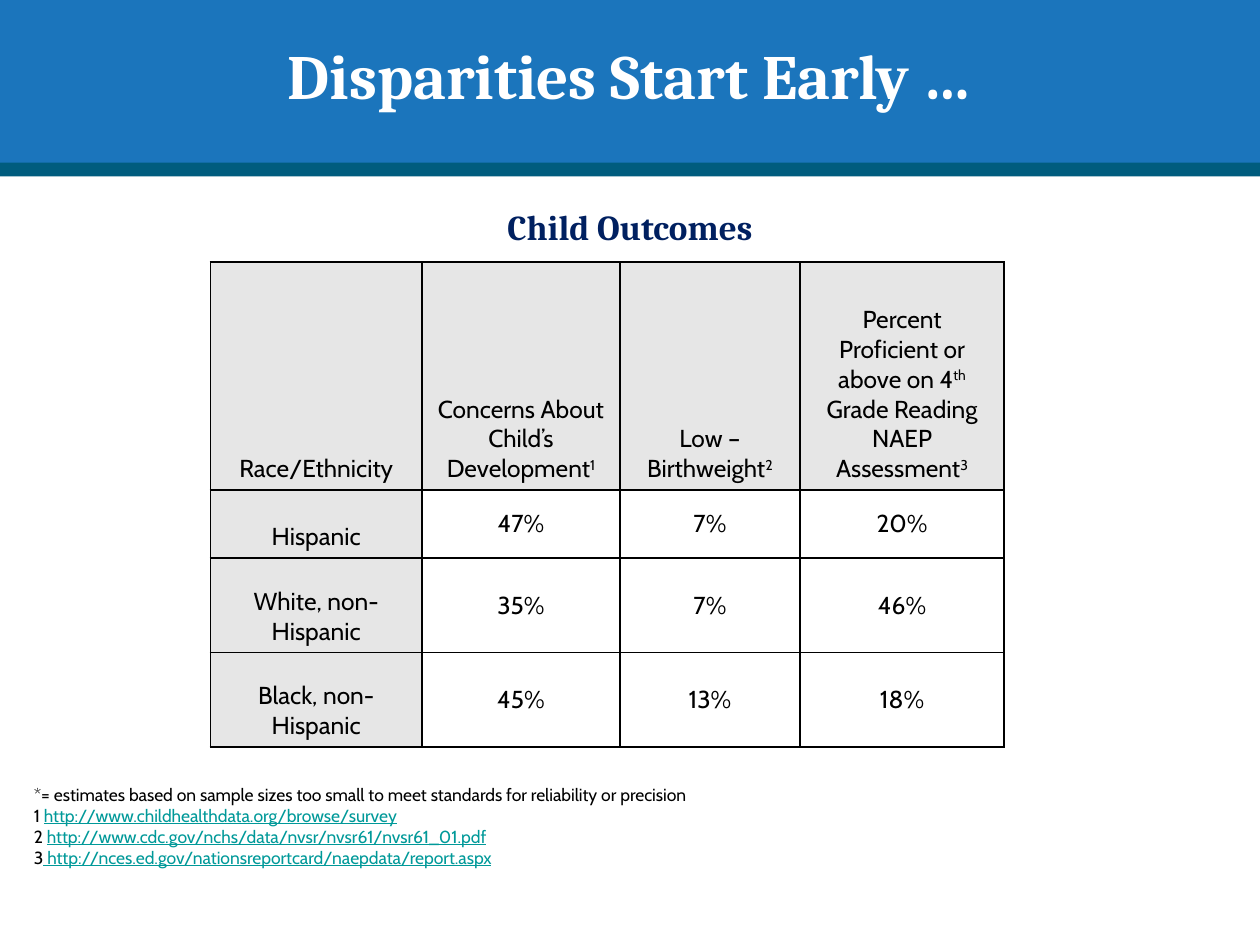
from dataclasses import dataclass

from lxml.etree import SubElement
from pptx import Presentation
from pptx.dml.color import RGBColor
from pptx.enum.shapes import MSO_SHAPE
from pptx.enum.text import MSO_ANCHOR, PP_ALIGN
from pptx.oxml.ns import qn
from pptx.util import Inches, Pt


@dataclass(frozen=True)
class Theme:
    """Colours, fonts and type sizes of the slide."""
    blue: str = "1B75BC"
    teal: str = "005C7E"
    navy: str = "002060"
    link: str = "009999"
    grey: str = "E6E6E6"
    white: str = "FFFFFF"
    black: str = "000000"
    serif: str = "Cambria"
    sans: str = "Cabin"
    title: int = 36
    head: int = 20
    cell: int = 14
    note: int = 10


THEME = Theme()
HEADS = [
    [("Race/Ethnicity", False)],
    [("Concerns About Child’s Development", False), ("1", True)],
    [("Low –Birthweight", False), ("2", True)],
    [("Percent Proficient or above on 4", False), ("th", True),
     (" Grade Reading NAEP Assessment", False), ("3", True)],
]
ROWS = [
    ("Hispanic", "47%", "7%", "20%"),
    ("White, non-Hispanic", "35%", "7%", "46%"),
    ("Black, non-Hispanic", "45%", "13%", "18%"),
]
WIDTHS = (1.68, 1.57, 1.43, 1.62)
HEIGHTS = (1.81, 0.54, 0.75, 0.75)
NOTES = [
    ("*= estimates based on sample sizes too small to meet standards "
     "for reliability or precision", ""),
    ("1 ", "http://www.childhealthdata.org/browse/survey"),
    ("2 ", "http://www.cdc.gov/nchs/data/nvsr/nvsr61/nvsr61_01.pdf"),
    ("3", " http://nces.ed.gov/nationsreportcard/naepdata/report.aspx"),
]


def style(para, face, size, color, bold=False, align=PP_ALIGN.CENTER):
    """Set the font and alignment of a paragraph."""
    font = para.font
    font.name, font.size, font.bold = face, Pt(size), bold
    font.color.rgb = RGBColor.from_string(color)
    para.alignment = align


def add_box(slide, box, inset=None):
    """Add a wrapping text box and return its frame."""
    frame = slide.shapes.add_textbox(*map(Inches, box)).text_frame
    frame.word_wrap = True
    if inset is not None:
        frame.margin_left = frame.margin_right = Inches(inset)
        frame.margin_top = frame.margin_bottom = Inches(inset)
    return frame


def add_band(slide, box, color):
    """Add a plain filled rectangle."""
    band = slide.shapes.add_shape(MSO_SHAPE.RECTANGLE, *map(Inches, box))
    band.shadow.inherit = False
    band.fill.solid()
    band.fill.fore_color.rgb = RGBColor.from_string(color)
    band.line.fill.background()


def add_banner(slide, box):
    """Add the title banner with its lower stripe."""
    left, top, width, height = box
    add_band(slide, (left, top, width, height - 0.07), THEME.blue)
    add_band(slide, (left, top + height - 0.11, width, 0.11), THEME.teal)
    frame = add_box(slide, (left + 0.5, top + 0.25, width - 1, 1.08), 0.04)
    para = frame.paragraphs[0]
    para.text = "Disparities Start Early …"
    style(para, THEME.serif, THEME.title, THEME.white, True)


def add_heading(slide, box):
    """Add the heading above the table."""
    para = add_box(slide, box).paragraphs[0]
    para.text = "Child Outcomes"
    style(para, THEME.serif, THEME.head, THEME.navy, True)


def add_edges(cell):
    """Draw thin borders on all four sides of a cell."""
    props = cell._tc.get_or_add_tcPr()
    for place, side in enumerate(("lnL", "lnR", "lnT", "lnB")):
        line = SubElement(props, qn(f"a:{side}"), w=str(Pt(1)))
        fill = SubElement(line, qn("a:solidFill"))
        SubElement(fill, qn("a:srgbClr"), val=THEME.black)
        props.insert(place, line)


def fill_cell(cell, parts, label):
    """Write the parts of a cell, raising the marked ones."""
    para = cell.text_frame.paragraphs[0]
    style(para, THEME.sans, THEME.cell, THEME.black)
    for text, raised in parts:
        run = para.add_run()
        run.text = text
        if raised:
            run.font._element.set("baseline", "30000")
    cell.vertical_anchor = MSO_ANCHOR.BOTTOM if label else MSO_ANCHOR.MIDDLE
    if label:
        cell.fill.solid()
        cell.fill.fore_color.rgb = RGBColor.from_string(THEME.grey)
    else:
        cell.fill.background()
    add_edges(cell)


def add_grid(slide, box):
    """Add the table of outcomes."""
    data = [HEADS] + [[[(text, False)] for text in row] for row in ROWS]
    table = slide.shapes.add_table(
        len(data), len(WIDTHS), *map(Inches, box)).table
    for col, width in zip(table.columns, WIDTHS):
        col.width = Inches(width)
    for row, height in zip(table.rows, HEIGHTS):
        row.height = Inches(height)
    for y, row in enumerate(data):
        for x, parts in enumerate(row):
            fill_cell(table.cell(y, x), parts, y == 0 or x == 0)


def add_notes(slide, box):
    """Add the footnotes with their underlined addresses."""
    frame = add_box(slide, box)
    for place, (mark, link) in enumerate(NOTES):
        para = frame.add_paragraph() if place else frame.paragraphs[0]
        style(para, THEME.sans, THEME.note, THEME.black, align=PP_ALIGN.LEFT)
        para.add_run().text = mark
        if link:
            run = para.add_run()
            run.text = link
            run.font.underline = True
            run.font.color.rgb = RGBColor.from_string(THEME.link)


def main():
    """Build and save the slide."""
    deck = Presentation()
    deck.slide_width, deck.slide_height = Inches(10), Inches(7.5)
    slide = deck.slides.add_slide(deck.slide_layouts[6])
    add_banner(slide, (0, 0, 10, 1.4))
    add_grid(slide, (1.67, 2.08, sum(WIDTHS), sum(HEIGHTS)))
    add_heading(slide, (0.75, 1.58, 8.5, 0.44))
    add_notes(slide, (0.17, 6.17, 5.92, 0.94))
    deck.save("out.pptx")


if __name__ == "__main__":
    main()
